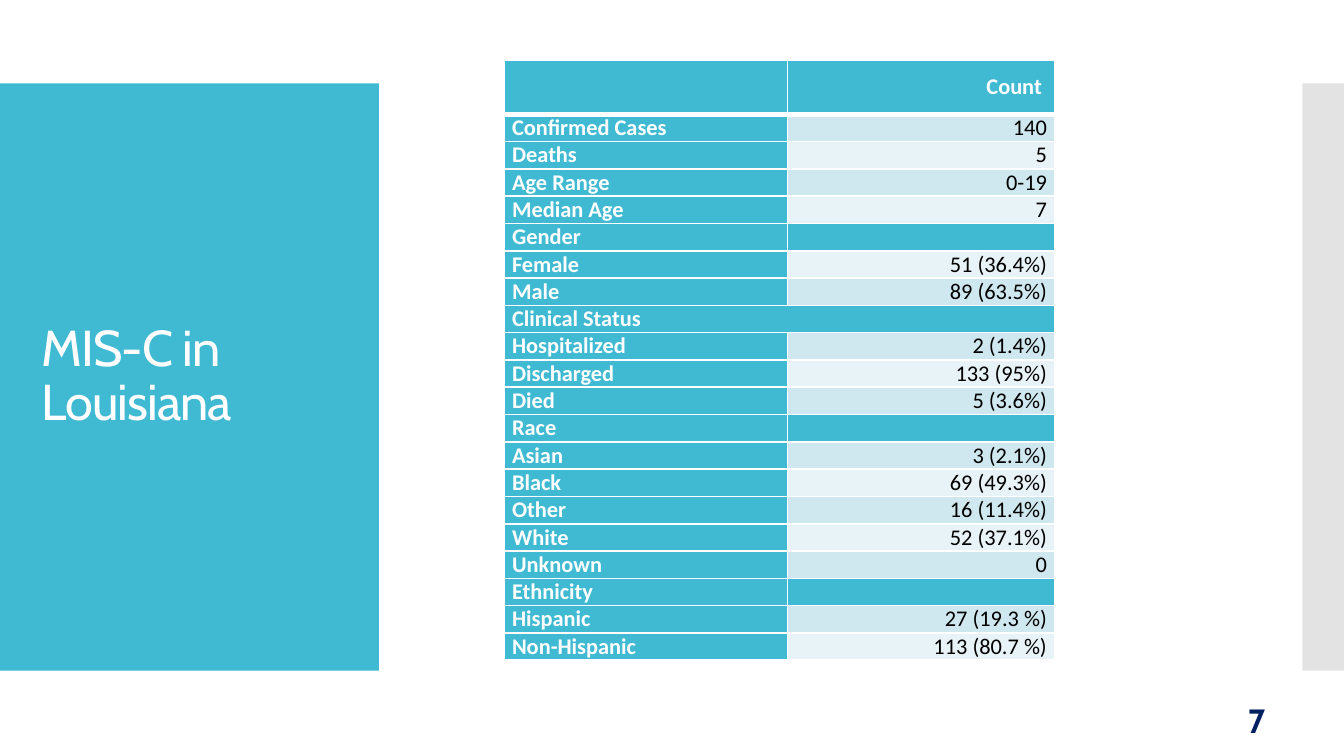
"""Build the slide with the MIS-C case counts for Louisiana."""
import lxml.etree
import pptx
import pptx.dml.color
import pptx.enum.shapes
import pptx.enum.text
import pptx.oxml.ns
import pptx.util

Inches = pptx.util.Inches
Pt = pptx.util.Pt
qn = pptx.oxml.ns.qn
ALIGN = pptx.enum.text.PP_ALIGN
MIDDLE = pptx.enum.text.MSO_ANCHOR.MIDDLE

COLORS = {
    "teal": "40BAD2",
    "gray": "C8C8C8",
    "white": "FFFFFF",
    "black": "000000",
    "navy": "002060",
    "band_dark": "CFE7EE",
    "band_light": "E8F3F7",
}

COUNTS = [
    ("", "Count "),
    ("Confirmed Cases", "140"),
    ("Deaths", "5"),
    ("Age Range", "0-19"),
    ("Median Age", "7"),
    ("Gender", ""),
    ("Female", "51 (36.4%)"),
    ("Male", "89 (63.5%)"),
    ("Clinical Status", ""),
    ("Hospitalized", "2 (1.4%)"),
    ("Discharged", "133 (95%)"),
    ("Died", "5 (3.6%)"),
    ("Race", ""),
    ("Asian", "3 (2.1%)"),
    ("Black", "69 (49.3%)"),
    ("Other", "16 (11.4%)"),
    ("White", "52 (37.1%)"),
    ("Unknown", "0"),
    ("Ethnicity", ""),
    ("Hispanic", "27 (19.3 %)"),
    ("Non-Hispanic", "113 (80.7 %)"),
]
MERGED_SECTION = "Clinical Status"
TABLE_HEIGHT = Inches(4.47)
HEADER_HEIGHT = Inches(0.4)


def rgb(name):
    return pptx.dml.color.RGBColor.from_string(COLORS[name])


def format_paragraph(paragraph, font_name, size, color, bold, align):
    paragraph.alignment = align
    font = paragraph.font
    font.name = font_name
    font.size = Pt(size)
    font.bold = bold
    font.color.rgb = rgb(color)


def add_panel(slide, left, width, color, opacity=100):
    panel = slide.shapes.add_shape(
        pptx.enum.shapes.MSO_SHAPE.RECTANGLE,
        Inches(left), Inches(0.62), Inches(width), Inches(4.37))
    panel.shadow.inherit = False
    panel.line.fill.background()
    panel.fill.solid()
    panel.fill.fore_color.rgb = rgb(color)
    if opacity < 100:
        tint = panel.element.spPr.find(qn("a:solidFill")).find(qn("a:srgbClr"))
        lxml.etree.SubElement(tint, qn("a:alpha"), val=str(opacity * 1000))


def place_title(slide, text):
    title = slide.shapes.title
    title.left, title.top = Inches(0.21), Inches(0.92)
    title.width, title.height = Inches(2.42), Inches(3.77)
    frame = title.text_frame
    frame.text = text
    frame.word_wrap = True
    frame.auto_size = pptx.enum.text.MSO_AUTO_SIZE.NONE
    frame.vertical_anchor = MIDDLE
    heading = frame.paragraphs[0]
    heading.line_spacing = 0.9
    format_paragraph(heading, "Cabin", 27, "white", False, ALIGN.LEFT)
    for properties in title.element.iter(qn("a:defRPr")):
        properties.set("spc", "-50")
    title.element.getparent().append(title.element)


def add_page_number(slide, number):
    box = slide.shapes.add_textbox(
        Inches(8.72), Inches(5.21), Inches(1.26), Inches(0.3))
    frame = box.text_frame
    frame.word_wrap = True
    frame.vertical_anchor = MIDDLE
    frame.text = number
    format_paragraph(frame.paragraphs[0], "Cabin", 18, "navy", True, ALIGN.CENTER)


def set_borders(cell, top, bottom):
    properties = cell._tc.get_or_add_tcPr()
    for side, width in (("L", 1), ("R", 1), ("T", top), ("B", bottom)):
        line = lxml.etree.SubElement(
            properties, qn(f"a:ln{side}"), w=str(Pt(width)))
        fill = lxml.etree.SubElement(line, qn("a:solidFill"))
        lxml.etree.SubElement(fill, qn("a:srgbClr"), val=COLORS["white"])


def format_cell(cell, text, fill, color, bold, align):
    cell.text = text
    cell.vertical_anchor = MIDDLE
    cell.margin_left = cell.margin_right = Inches(0.06)
    cell.margin_top = cell.margin_bottom = 0
    format_paragraph(
        cell.text_frame.paragraphs[0], "Calibri", 12, color, bold, align)
    cell.fill.solid()
    cell.fill.fore_color.rgb = rgb(fill)


def add_count_table(slide):
    table = slide.shapes.add_table(
        len(COUNTS), 2, Inches(3.75), Inches(0.45),
        Inches(4.1), TABLE_HEIGHT).table
    row_height = (TABLE_HEIGHT - HEADER_HEIGHT) // (len(COUNTS) - 1)
    for column, width in zip(table.columns, (2.11, 1.99)):
        column.width = Inches(width)
    for index, (label, count) in enumerate(COUNTS):
        is_header = index == 0
        table.rows[index].height = HEADER_HEIGHT if is_header else row_height
        label_cell, count_cell = table.cell(index, 0), table.cell(index, 1)
        for cell in (label_cell, count_cell):
            set_borders(cell, 3 if index == 1 else 1, 3 if is_header else 1)
        format_cell(label_cell, label, "teal", "white", True, ALIGN.LEFT)
        if is_header or not count:
            format_cell(count_cell, count, "teal", "white", True, ALIGN.RIGHT)
        else:
            band = "band_dark" if index % 2 else "band_light"
            format_cell(count_cell, count, band, "black", False, ALIGN.RIGHT)
        if label == MERGED_SECTION:
            label_cell.merge(count_cell)


def main():
    presentation = pptx.Presentation()
    presentation.slide_width = Inches(10)
    presentation.slide_height = Inches(10) * 9 // 16
    slide = presentation.slides.add_slide(presentation.slide_layouts[5])
    add_panel(slide, 0, 2.82, "teal")
    add_panel(slide, 9.69, 0.32, "gray", opacity=50)
    place_title(slide, "MIS-C in Louisiana")
    add_page_number(slide, "7")
    add_count_table(slide)
    presentation.save("out.pptx")


if __name__ == "__main__":
    main()
